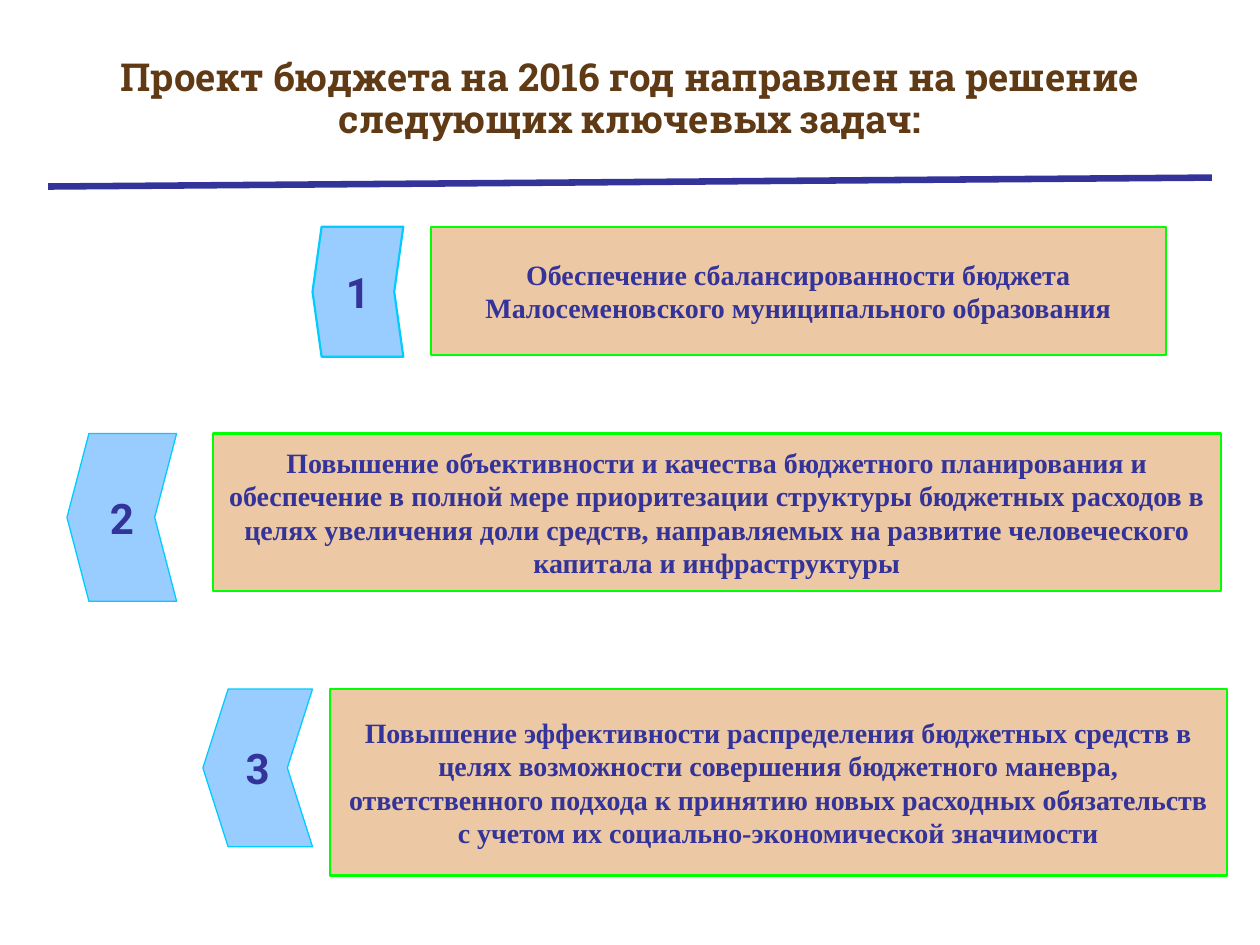
from pptx import Presentation
from pptx.dml.color import RGBColor
from pptx.enum.shapes import MSO_CONNECTOR, MSO_SHAPE
from pptx.enum.text import MSO_ANCHOR, MSO_AUTO_SIZE, PP_ALIGN
from pptx.oxml.ns import qn
from pptx.util import Cm, Pt
from lxml import etree

RECTANGLE = MSO_SHAPE.RECTANGLE
CHEVRON = MSO_SHAPE.CHEVRON
STRAIGHT = MSO_CONNECTOR.STRAIGHT
CENTER = PP_ALIGN.CENTER

COLORS = {
    "heading": "603A14",
    "ink": "333399",
    "task_fill": "ECC8A4",
    "task_line": "00FF00",
    "number_fill": "99CCFF",
    "number_line": "00CCFF",
}

FRAME = {
    "word_wrap": True,
    "auto_size": MSO_AUTO_SIZE.NONE,
    "vertical_anchor": MSO_ANCHOR.MIDDLE,
    "margin_left": Cm(0.25),
    "margin_right": Cm(0.25),
    "margin_top": Cm(0.13),
    "margin_bottom": Cm(0.13),
}
HEADING_FONT = {"name": "Roboto Slab", "size": Pt(22), "bold": True}
TASK_FONT = {"name": "Times New Roman", "size": Pt(16), "bold": True}
NUMBER_FONT = {"name": "Roboto", "size": Pt(24), "bold": True}

HEADING = "Проект бюджета на 2016 год направлен на решение следующих ключевых задач:"

# Each task: top, number (left, width, height, notch, line width),
# box (left, width, height), wording; lengths in cm
TASKS = [
    (4.57, (6.3, 1.83, 2.62, 0.1, 1.25), (8.69, 14.81, 2.59),
     "Обеспечение сбалансированности бюджета Малосеменовского "
     "муниципального образования"),
    (8.74, (1.35, 2.21, 3.38, 0.2, 0.75), (4.29, 20.32, 3.18),
     "Повышение объективности и качества бюджетного планирования и "
     "обеспечение в полной мере приоритезации структуры бюджетных расходов "
     "в целях увеличения доли средств, направляемых на развитие "
     "человеческого капитала и инфраструктуры"),
    (13.89, (4.09, 2.21, 3.18, 0.23, 0.75), (6.65, 18.08, 3.76),
     "Повышение эффективности распределения бюджетных средств в целях "
     "возможности совершения бюджетного маневра, ответственного подхода к "
     "принятию новых расходных обязательств с учетом их "
     "социально-экономической значимости"),
]


def rgb(key):
    return RGBColor.from_string(COLORS[key])


def apply(target, values):
    for attribute, value in values.items():
        setattr(target, attribute, value)


def write(shape, text, font, color):
    frame = shape.text_frame
    apply(frame, FRAME)
    paragraph = frame.paragraphs[0]
    paragraph.alignment = CENTER
    run = paragraph.add_run()
    run.text = text
    apply(run.font, font)
    run.font.color.rgb = rgb(color)


def add_heading(slide):
    heading = slide.shapes.title
    apply(heading, {"left": Cm(1.27), "top": Cm(0.66),
                    "width": Cm(22.86), "height": Cm(2.72)})
    write(heading, HEADING, HEADING_FONT, "heading")
    heading.text_frame.paragraphs[0].line_spacing = 0.9


def add_rule(slide):
    rule = slide.shapes.add_connector(
        STRAIGHT, Cm(0.97), Cm(3.76), Cm(24.43), Cm(3.58))
    rule.line.color.rgb = rgb("ink")
    rule.line.width = Pt(3.75)
    etree.SubElement(rule.line._get_or_add_ln().getparent(), qn("a:effectLst"))


def add_panel(slide, kind, box, role, line_width):
    panel = slide.shapes.add_shape(kind, *(Cm(length) for length in box))
    panel.shadow.inherit = False
    panel.fill.solid()
    panel.fill.fore_color.rgb = rgb(role + "_fill")
    panel.line.color.rgb = rgb(role + "_line")
    panel.line.width = Pt(line_width)
    return panel


def add_number(slide, number, top, layout):
    left, width, height, notch, line_width = layout
    arrow = add_panel(slide, CHEVRON, (left, top, width, height),
                      "number", line_width)
    arrow.adjustments[0] = notch
    arrow.rotation = 180
    write(arrow, str(number), NUMBER_FONT, "ink")
    # Turn the digit back upright inside the rotated arrow
    arrow.text_frame._txBody.bodyPr.set("rot", "10800000")


def add_task(slide, top, layout, wording):
    left, width, height = layout
    task = add_panel(slide, RECTANGLE, (left, top, width, height),
                     "task", 1.25)
    write(task, wording, TASK_FONT, "ink")


def main():
    deck = Presentation()
    apply(deck, {"slide_width": Cm(25.4), "slide_height": Cm(19.05)})
    slide = deck.slides.add_slide(deck.slide_layouts[5])

    # Heading and the rule below it
    add_heading(slide)
    add_rule(slide)

    # Numbered tasks
    for number, (top, arrow, box, wording) in enumerate(TASKS, 1):
        add_number(slide, number, top, arrow)
        add_task(slide, top, box, wording)

    deck.save("out.pptx")


if __name__ == "__main__":
    main()
